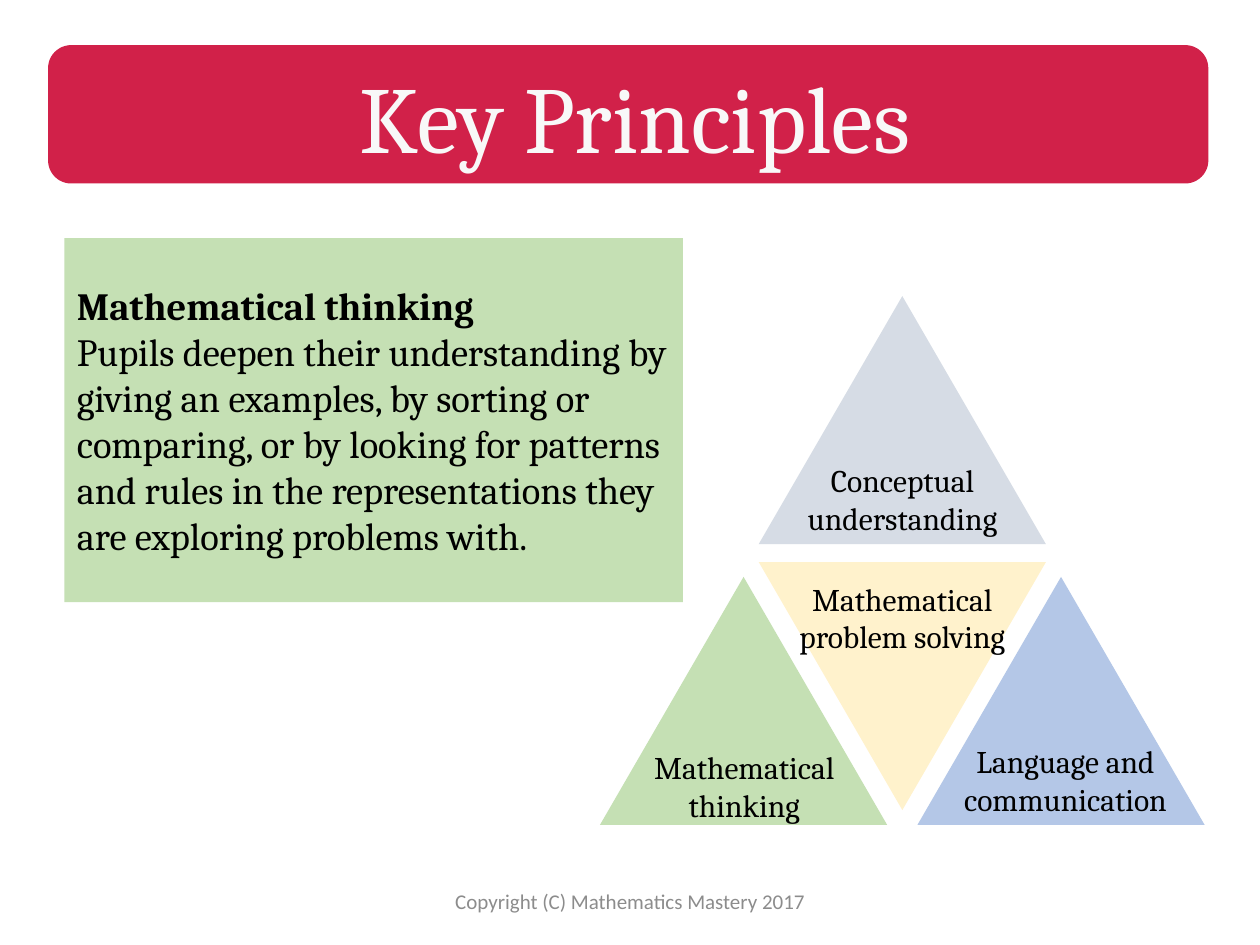
from dataclasses import dataclass

import pptx
import pptx.dml.color
import pptx.enum.shapes
import pptx.enum.text
import pptx.util
from pptx.util import Cm

COLOURS = {
    "banner": "D12149",
    "title": "F8F8F8",
    "text": "000000",
    "footer": "8C8C8C",
    "concept": "D6DCE5",
    "language": "B4C7E7",
    "problem": "FFF2CC",
    "thinking": "C5E0B4",
}
SHAPES = pptx.enum.shapes.MSO_SHAPE
ANCHORS = pptx.enum.text.MSO_ANCHOR
CENTRE = pptx.enum.text.PP_ALIGN.CENTER
LEFT = pptx.enum.text.PP_ALIGN.LEFT

# Pyramid grid, in centimetres
TRIANGLE_WIDTH, TRIANGLE_HEIGHT = 5.79, 5.0
PYRAMID_CENTRE, COLUMN_STEP = 18.19, 3.2


@dataclass
class Principle:
    colour: str
    column: int
    top: float
    rotation: int = 0


@dataclass
class Label:
    text: str
    left: float
    top: float
    width: float
    height: float = 1.8


PRINCIPLES = [
    Principle("concept", 0, 5.97),
    Principle("language", 1, 11.63),
    Principle("problem", 0, 11.33, 180),
    Principle("thinking", -1, 11.63),
]
LABELS = [
    Label("Mathematical problem solving", 15.84, 11.56, 4.7, 2.57),
    Label("Conceptual understanding", 15.59, 9.17, 5.21),
    Label("Language and communication", 18.85, 14.83, 5.26),
    Label("Mathematical thinking", 12.73, 14.96, 4.55),
]


def rgb(name: str) -> pptx.dml.color.RGBColor:
    return pptx.dml.color.RGBColor.from_string(COLOURS[name])


def add_filled_shape(shapes, kind, left: float, top: float, width: float,
                     height: float, colour: str):
    shape = shapes.add_shape(kind, Cm(left), Cm(top), Cm(width), Cm(height))
    shape.shadow.inherit = False
    shape.fill.solid()
    shape.fill.fore_color.rgb = rgb(colour)
    shape.line.fill.background()
    return shape


def format_paragraph(paragraph, text: str, size: int, colour: str = "text",
                     font: str = "Cambria", alignment=CENTRE,
                     bold: bool = False) -> None:
    paragraph.text = text
    paragraph.alignment = alignment
    paragraph.font.name = font
    paragraph.font.size = pptx.util.Pt(size)
    paragraph.font.bold = bold
    paragraph.font.color.rgb = rgb(colour)


def add_label(shapes, label: Label, size: int = 18, colour: str = "text",
              font: str = "Cambria", anchor=ANCHORS.TOP) -> None:
    box = shapes.add_textbox(Cm(label.left), Cm(label.top),
                             Cm(label.width), Cm(label.height))
    frame = box.text_frame
    frame.word_wrap = True
    frame.vertical_anchor = anchor
    format_paragraph(frame.paragraphs[0], label.text, size, colour, font)


def add_triangle(shapes, principle: Principle) -> None:
    centre = PYRAMID_CENTRE + principle.column * COLUMN_STEP
    triangle = add_filled_shape(
        shapes, SHAPES.ISOSCELES_TRIANGLE, centre - TRIANGLE_WIDTH / 2,
        principle.top, TRIANGLE_WIDTH, TRIANGLE_HEIGHT, principle.colour)
    triangle.rotation = principle.rotation


def add_explanation(shapes) -> None:
    panel = add_filled_shape(shapes, SHAPES.RECTANGLE,
                             1.3, 4.8, 12.47, 7.34, "thinking")
    frame = panel.text_frame
    frame.word_wrap = True
    frame.vertical_anchor = ANCHORS.MIDDLE
    format_paragraph(frame.paragraphs[0], "Mathematical thinking", 22,
                     alignment=LEFT, bold=True)
    format_paragraph(
        frame.add_paragraph(),
        "Pupils deepen their understanding by giving an examples, by sorting "
        "or comparing, or by looking for patterns and rules in the "
        "representations they are exploring problems with.",
        22, alignment=LEFT)


def add_title(slide) -> None:
    add_filled_shape(slide.shapes, SHAPES.ROUNDED_RECTANGLE,
                     0.97, 0.91, 23.39, 2.79, "banner")
    title = slide.shapes.title
    title.left, title.top = Cm(1.3), Cm(1.04)
    title.width, title.height = Cm(23.01), Cm(2.57)
    frame = title.text_frame
    frame.auto_size = pptx.enum.text.MSO_AUTO_SIZE.NONE
    frame.vertical_anchor = ANCHORS.MIDDLE
    format_paragraph(frame.paragraphs[0], "Key Principles", 54, "title")
    # Bring the title in front of its banner
    slide.shapes._spTree.append(title._element)


def main() -> None:
    presentation = pptx.Presentation()
    presentation.slide_width, presentation.slide_height = Cm(25.4), Cm(19.05)
    slide = presentation.slides.add_slide(presentation.slide_layouts[5])

    # Pyramid of principles
    pyramid = slide.shapes.add_group_shape()
    for principle in PRINCIPLES:
        add_triangle(pyramid.shapes, principle)
    for label in LABELS:
        add_label(pyramid.shapes, label)

    # Explanation, heading and footer
    add_explanation(slide.shapes)
    add_title(slide)
    footer = Label("Copyright (C) Mathematics Mastery 2017",
                   8.41, 17.65, 8.59, 1.02)
    add_label(slide.shapes, footer, 12, "footer", "Calibri", ANCHORS.MIDDLE)

    presentation.save("out.pptx")


if __name__ == "__main__":
    main()
